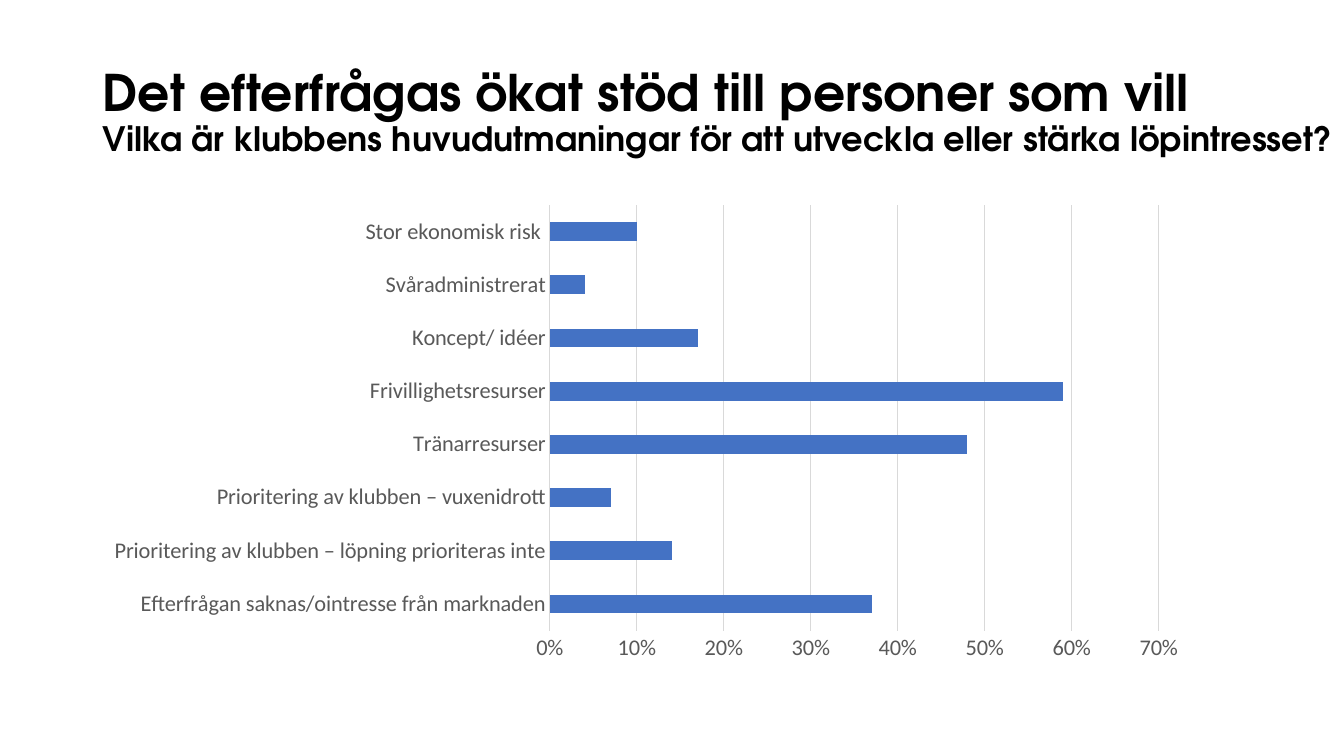
"""Build a slide with a bar chart of running clubs' main challenges."""
from pptx import Presentation
from pptx.chart.data import CategoryChartData
from pptx.dml.color import RGBColor
from pptx.enum.chart import XL_CHART_TYPE, XL_TICK_MARK
from pptx.enum.text import MSO_ANCHOR, MSO_AUTO_SIZE, PP_ALIGN
from pptx.util import Cm, Pt

BAR_CLUSTERED = XL_CHART_TYPE.BAR_CLUSTERED
NO_TICK = XL_TICK_MARK.NONE
MIDDLE = MSO_ANCHOR.MIDDLE
NO_AUTOFIT = MSO_AUTO_SIZE.NONE
LEFT = PP_ALIGN.LEFT

COLOURS = {
    "title": "000000",
    "label": "595959",
    "grid": "D9D9D9",
    "bar": "4472C4",
}
TITLE_LINES = [
    ("Det efterfrågas ökat stöd till personer som vill", 36),
    ("Vilka är klubbens huvudutmaningar för att utveckla eller stärka löpintresset?", 24),
]
CHALLENGES = {
    "Efterfrågan saknas/ointresse från marknaden": 0.37,
    "Prioritering av klubben – löpning prioriteras inte": 0.14,
    "Prioritering av klubben – vuxenidrott": 0.07,
    "Tränarresurser": 0.48,
    "Frivillighetsresurser": 0.59,
    "Koncept/ idéer": 0.17,
    "Svåradministrerat": 0.04,
    "Stor ekonomisk risk ": 0.1,
}


class SlideBuilder:
    """Holds the style and the current slide."""

    title_font = "TeX Gyre Adventor"
    chart_font = "Calibri"

    def __init__(self, presentation):
        """Add a title-only slide to the presentation."""
        self.slide = presentation.slides.add_slide(presentation.slide_layouts[5])

    def colour(self, name):
        """Return the named colour."""
        return RGBColor.from_string(COLOURS[name])

    def style_font(self, font, name, size, colour, bold=False):
        """Apply typeface, size, colour and weight to a font."""
        font.name = name
        font.size = Pt(size)
        font.bold = bold
        font.color.rgb = self.colour(colour)

    def style_line(self, line):
        """Apply the thin grey chart line."""
        line.color.rgb = self.colour("grid")
        line.width = Pt(0.75)

    def title(self, lines, left, top, width, height):
        """Place the title and format each of its lines."""
        title = self.slide.shapes.title
        title.left, title.top = Cm(left), Cm(top)
        title.width, title.height = Cm(width), Cm(height)
        frame = title.text_frame
        frame.word_wrap = True
        frame.auto_size = NO_AUTOFIT
        frame.vertical_anchor = MIDDLE
        paragraph = frame.paragraphs[0]
        paragraph.text = "\v".join(text for text, size in lines)
        paragraph.alignment = LEFT
        paragraph.line_spacing = 0.9
        for run, (text, size) in zip(paragraph.runs, lines):
            self.style_font(run.font, self.title_font, size, "title", True)

    def bar_chart(self, values, left, top, width, height):
        """Add a horizontal bar chart with percentages."""
        chart_data = CategoryChartData(number_format="0%")
        chart_data.categories = list(values)
        chart_data.add_series("Series 1", list(values.values()))
        chart = self.slide.shapes.add_chart(
            BAR_CLUSTERED, Cm(left), Cm(top), Cm(width), Cm(height), chart_data
        ).chart
        chart.has_legend = False
        chart.has_title = False
        self.style_font(chart.font, self.chart_font, 10, "title")

        plot = chart.plots[0]
        plot.gap_width = 182
        plot.vary_by_categories = False
        fill = plot.series[0].format.fill
        fill.solid()
        fill.fore_color.rgb = self.colour("bar")

        category_axis, value_axis = chart.category_axis, chart.value_axis
        for axis in (category_axis, value_axis):
            axis.major_tick_mark = NO_TICK
            axis.minor_tick_mark = NO_TICK
            self.style_font(axis.tick_labels.font, self.chart_font, 16, "label")
        category_axis.has_major_gridlines = False
        self.style_line(category_axis.format.line)
        value_axis.minimum_scale = 0
        value_axis.maximum_scale = 0.7
        value_axis.major_unit = 0.1
        value_axis.tick_labels.number_format = "0%"
        value_axis.tick_labels.number_format_is_linked = False
        value_axis.format.line.fill.background()
        value_axis.has_major_gridlines = True
        self.style_line(value_axis.major_gridlines.format.line)


def main():
    """Build and save the presentation."""
    presentation = Presentation()
    presentation.slide_width = Cm(33.87)
    presentation.slide_height = Cm(19.05)
    builder = SlideBuilder(presentation)
    builder.title(TITLE_LINES, 2.33, 1.01, 31.83, 3.68)
    builder.bar_chart(CHALLENGES, 2.33, 4.93, 27.91, 11.99)
    presentation.save("out.pptx")


if __name__ == "__main__":
    main()
